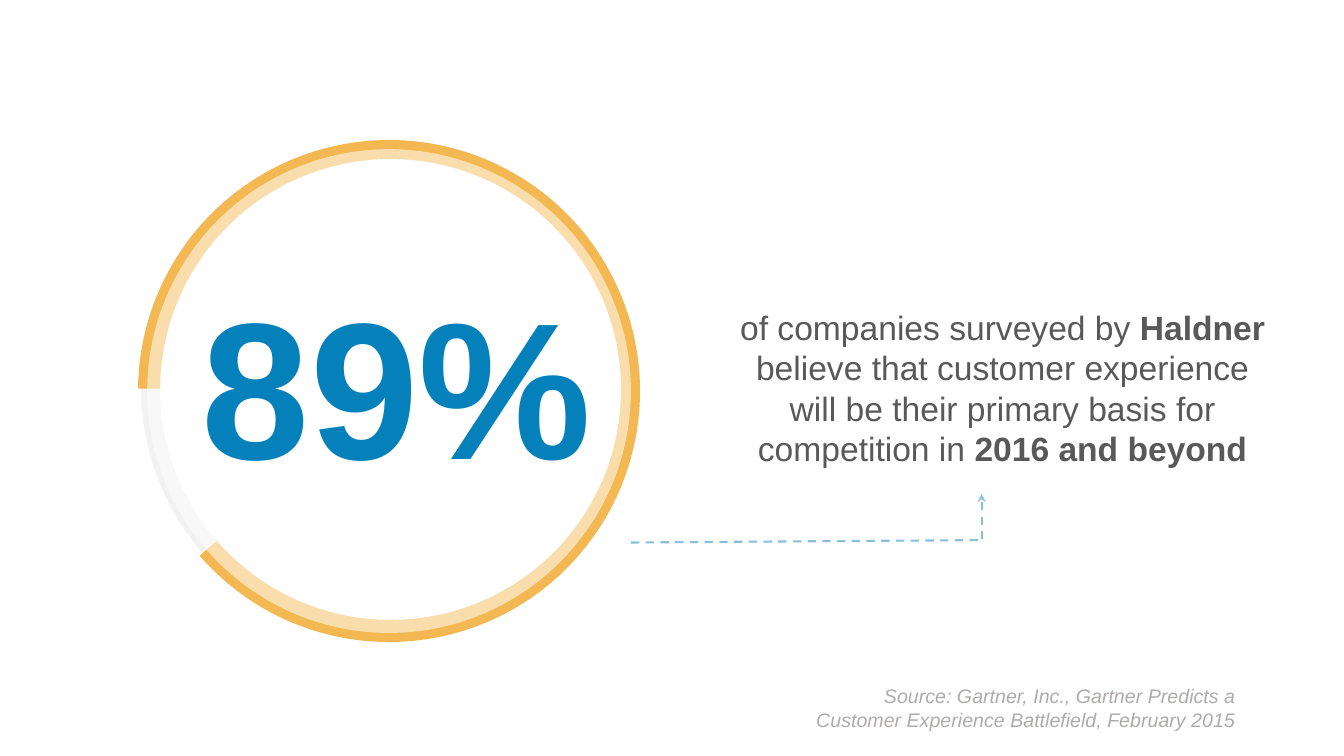
"""Build a survey slide with a ring gauge, a statement and its source."""
import lxml.etree
import pptx
import pptx.dml.color
import pptx.enum.dml
import pptx.enum.shapes
import pptx.enum.text
import pptx.oxml.ns
import pptx.util
from pptx.util import Cm

COLORS = {
    "track": "F2F2F2",
    "gauge": "F4B852",
    "white": "FFFFFF",
    "figure": "0480BA",
    "body": "595959",
    "arrow": "88C0DC",
    "source": "AFABAB",
}
SHAPES = pptx.enum.shapes.MSO_SHAPE
ALIGN = pptx.enum.text.PP_ALIGN
ANCHOR = pptx.enum.text.MSO_ANCHOR


def color(name):
    """Return the named palette colour."""
    return pptx.dml.color.RGBColor.from_string(COLORS[name])


def add_xml(parent, tag, **attributes):
    """Append a DrawingML element to a parent."""
    return lxml.etree.SubElement(parent, pptx.oxml.ns.qn(tag), **attributes)


def add_disc(shapes, left, top, size, fill, kind=SHAPES.OVAL, alpha=None):
    """Add a round shape without outline, optionally translucent."""
    disc = shapes.add_shape(kind, Cm(left), Cm(top), Cm(size), Cm(size))
    disc.shadow.inherit = False
    disc.line.fill.background()
    disc.fill.solid()
    disc.fill.fore_color.rgb = color(fill)
    if alpha is not None:
        fill_color = disc.element.spPr.find(".//" + pptx.oxml.ns.qn("a:srgbClr"))
        add_xml(fill_color, "a:alpha", val=str(alpha * 1000))
    return disc


def add_gauge(slide):
    """Add the grouped ring gauge."""
    shapes = slide.shapes.add_group_shape().shapes
    add_disc(shapes, 3.56, 3.53, 12.55, "track")
    pie = add_disc(shapes, 3.48, 3.53, 12.65, "gauge", SHAPES.PIE)
    pie.adjustments[0] = 108.35
    pie.adjustments[1] = 83.39
    add_disc(shapes, 4.04, 4.01, 11.61, "white")
    add_disc(shapes, 3.71, 3.76, 12.19, "white", alpha=53)


def add_text(slide, left, top, width, height, runs, size, fill,
             align=ALIGN.CENTER, anchor=ANCHOR.MIDDLE, italic=False):
    """Add a one-paragraph text box from (text, bold) runs."""
    box = slide.shapes.add_textbox(Cm(left), Cm(top), Cm(width), Cm(height))
    frame = box.text_frame
    frame.word_wrap = True
    frame.vertical_anchor = anchor
    paragraph = frame.paragraphs[0]
    paragraph.alignment = align
    paragraph.font.name = "Arial"
    paragraph.font.size = pptx.util.Pt(size)
    paragraph.font.italic = italic
    paragraph.font.color.rgb = color(fill)
    for text, bold in runs:
        run = paragraph.add_run()
        run.text = text
        run.font.bold = bold


def add_dashed_line(slide, start, end, arrow=False):
    """Add a dashed line, with an arrowhead at its start if wanted."""
    line = slide.shapes.add_connector(
        pptx.enum.shapes.MSO_CONNECTOR.STRAIGHT, *map(Cm, start + end))
    line.line.color.rgb = color("arrow")
    line.line.width = pptx.util.Pt(1.5)
    line.line.dash_style = pptx.enum.dml.MSO_LINE.DASH
    properties = line.element.spPr
    if arrow:
        add_xml(properties.find(pptx.oxml.ns.qn("a:ln")), "a:headEnd", type="stealth")
    add_xml(properties, "a:effectLst")


def main():
    """Build and save the slide."""
    presentation = pptx.Presentation()
    presentation.slide_width = Cm(33.87)
    presentation.slide_height = Cm(19.05)
    slide = presentation.slides.add_slide(presentation.slide_layouts[6])

    add_gauge(slide)
    add_text(slide, 3.48, 5.38, 13.03, 8.46, [("89%", True)], 139, "figure")
    statement = [
        ("of companies surveyed by ", False),
        ("Haldner", True),
        (" believe that customer experience will be their primary basis "
         "for competition in ", False),
        ("2016 and beyond", True),
    ]
    add_text(slide, 18.19, 7.75, 14.15, 4.04, statement, 24, "body")
    add_dashed_line(slide, (24.74, 12.45), (24.74, 13.59), arrow=True)
    add_dashed_line(slide, (15.9, 13.67), (24.79, 13.61))
    source = ("Source: Gartner, Inc., Gartner Predicts a Customer Experience "
              "Battlefield, February 2015")
    add_text(slide, 19.96, 17.12, 11.43, 1.9, [(source, False)], 14, "source",
             ALIGN.RIGHT, ANCHOR.TOP, italic=True)

    presentation.save("out.pptx")


if __name__ == "__main__":
    main()
